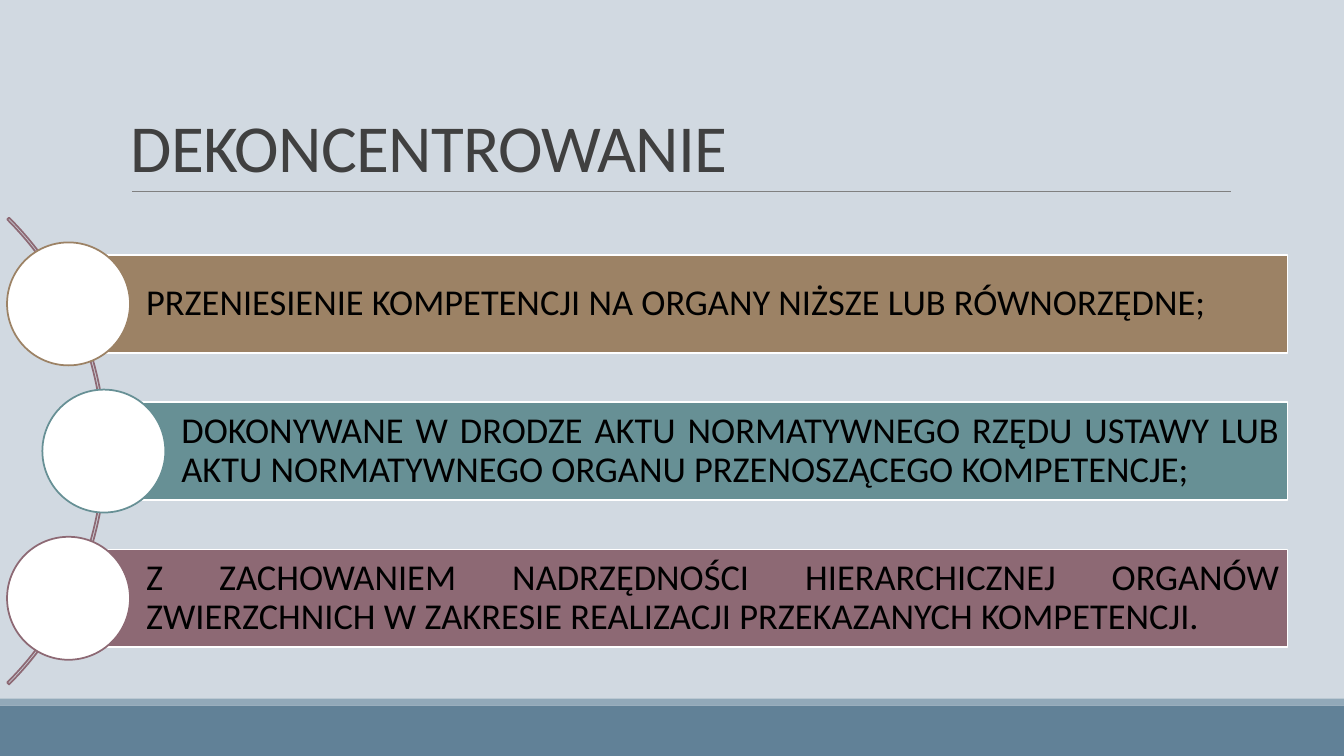
from pptx import Presentation
from pptx.dml.color import RGBColor
from pptx.enum.shapes import MSO_CONNECTOR, MSO_SHAPE
from pptx.enum.text import MSO_ANCHOR, PP_ALIGN
from pptx.oxml.ns import qn
from pptx.util import Inches, Pt

RECTANGLE, OVAL, ARC = MSO_SHAPE.RECTANGLE, MSO_SHAPE.OVAL, MSO_SHAPE.BLOCK_ARC
STRAIGHT = MSO_CONNECTOR.STRAIGHT
LEFT, JUSTIFY = PP_ALIGN.LEFT, PP_ALIGN.JUSTIFY
MIDDLE, BOTTOM = MSO_ANCHOR.MIDDLE, MSO_ANCHOR.BOTTOM

WIDTH, HEIGHT = Inches(13.33), Inches(7.5)
FONT = "Calibri"

# Shares of the slide's width and height, in percent
MIDDLE_Y, PITCH = 59.67, 19.47
BAR_RIGHT, BAR_HEIGHT = 95.8, 12.93
CIRCLE_WIDTH, CIRCLE_HEIGHT = 9.15, 16.27
INDENT, MARGIN = 5.77, 0.53

# Bar start, colour, alignment, text
POINTS = [
    (5.1, "9C8265", LEFT,
     "PRZENIESIENIE KOMPETENCJI NA ORGANY NIŻSZE LUB RÓWNORZĘDNE;"),
    (7.73, "679095", JUSTIFY,
     "DOKONYWANE W DRODZE AKTU NORMATYWNEGO RZĘDU USTAWY LUB "
     "AKTU NORMATYWNEGO ORGANU PRZENOSZĄCEGO KOMPETENCJE;"),
    (5.1, "8D6974", JUSTIFY,
     "Z ZACHOWANIEM NADRZĘDNOŚCI HIERARCHICZNEJ ORGANÓW "
     "ZWIERZCHNICH W ZAKRESIE REALIZACJI PRZEKAZANYCH KOMPETENCJI."),
]


def across(share):
    return round(WIDTH * share / 100)


def down(share):
    return round(HEIGHT * share / 100)


def place(left, top, width, height):
    return across(left), down(top), across(width), down(height)


def color(value):
    return RGBColor.from_string(value)


def add_shape(page, kind, area, fill=None, line=None):
    shape = page.shapes.add_shape(kind, *place(*area))
    shape.shadow.inherit = False
    if fill:
        shape.fill.solid()
        shape.fill.fore_color.rgb = color(fill)
    else:
        shape.fill.background()
    if line:
        shape.line.color.rgb = color(line)
        shape.line.width = Pt(1.25)
    else:
        shape.line.fill.background()
    return shape


def write(shape, text, size, ink, anchor, spacing, align=LEFT):
    """Fill the shape with one formatted paragraph and return its run."""
    frame = shape.text_frame
    frame.text = text
    frame.word_wrap = True
    frame.vertical_anchor = anchor
    para = frame.paragraphs[0]
    para.alignment = align
    para.line_spacing = spacing
    span = para.runs[0]
    span.font.name = FONT
    span.font.size = Pt(size)
    span.font.color.rgb = color(ink)
    return span


def add_title(page, text):
    box = page.shapes.add_textbox(*place(9, 4.13, 82.5, 21.2))
    span = write(box, text, 48, "404040", BOTTOM, 0.85)
    span.font._element.set("spc", "-50")


def add_rule(page, left, right, level):
    rule = page.shapes.add_connector(
        STRAIGHT, across(left), down(level), across(right), down(level))
    rule.line.color.rgb = color("808080")
    rule.line.width = Pt(0.5)
    properties = rule._element.spPr
    properties.append(properties.makeelement(qn("a:effectLst"), {}))


def add_arc(page):
    arc = add_shape(page, ARC, (-41.25, 16, 49.12, 87.33), line="8D6974")
    # Start and end angle in hundred-thousands of 1/60000 degree, then thickness
    for index, value in enumerate((189, 27, 0.004)):
        arc.adjustments[index] = value


def add_point(page, center_y, start, tint, align, text):
    """Add a bar with its text and the circle centred on the bar's left end."""
    bar = add_shape(
        page, RECTANGLE,
        (start, center_y - BAR_HEIGHT / 2, BAR_RIGHT - start, BAR_HEIGHT),
        tint, "FFFFFF")
    frame = bar.text_frame
    frame.margin_left = across(INDENT)
    frame.margin_right = frame.margin_top = frame.margin_bottom = across(MARGIN)
    write(bar, text, 26, "000000", MIDDLE, 0.9, align)
    add_shape(
        page, OVAL,
        (start - CIRCLE_WIDTH / 2, center_y - CIRCLE_HEIGHT / 2,
         CIRCLE_WIDTH, CIRCLE_HEIGHT),
        "FFFFFF", tint)


def main():
    deck = Presentation()
    deck.slide_width, deck.slide_height = WIDTH, HEIGHT
    page = deck.slides.add_slide(deck.slide_layouts[6])
    page.background.fill.solid()
    page.background.fill.fore_color.rgb = color("D1D9E1")

    add_shape(page, RECTANGLE, (0, 93.33, 100, 6.67), "618197")
    add_shape(page, RECTANGLE, (0, 92.4, 100, 0.93), "92A9B9")
    add_rule(page, 9.83, 91.58, 25.33)
    add_title(page, "DEKONCENTROWANIE")
    add_arc(page)
    for row, point in enumerate(POINTS):
        add_point(page, MIDDLE_Y + (row - 1) * PITCH, *point)
    deck.save("out.pptx")


if __name__ == "__main__":
    main()
